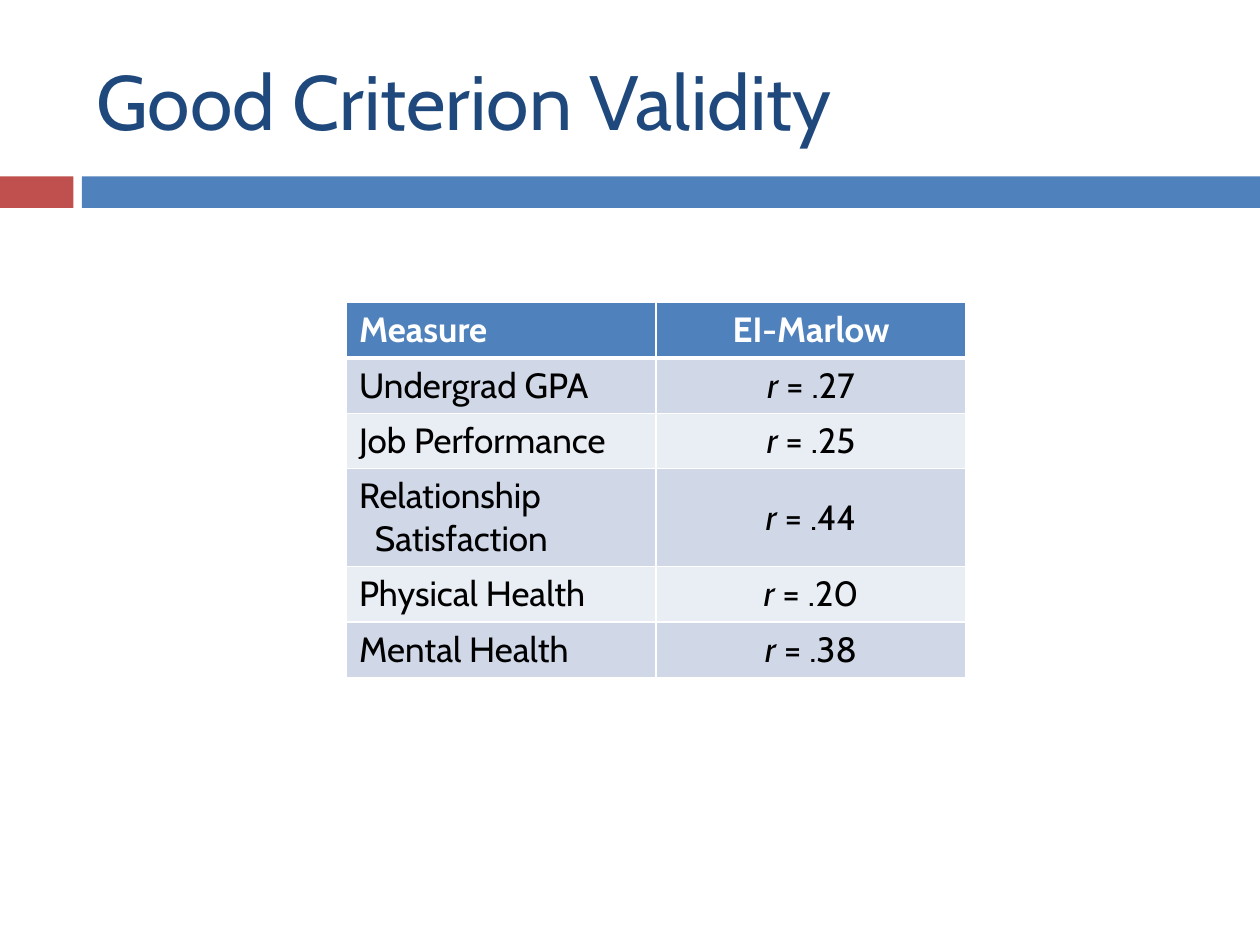
from dataclasses import dataclass

from lxml import etree
from pptx import Presentation
from pptx.dml.color import RGBColor
from pptx.enum.shapes import MSO_SHAPE
from pptx.enum.text import MSO_ANCHOR, PP_ALIGN
from pptx.oxml.ns import qn
from pptx.util import Pt

RECTANGLE = MSO_SHAPE.RECTANGLE
LEFT, CENTER = PP_ALIGN.LEFT, PP_ALIGN.CENTER
TOP, MIDDLE = MSO_ANCHOR.TOP, MSO_ANCHOR.MIDDLE
TITLE_ONLY = 5


@dataclass(frozen=True)
class Theme:
    font: str = "Cabin"
    title_size: int = 44
    table_size: int = 20
    title: str = "1F497D"
    accent: str = "C0504D"
    primary: str = "4F81BD"
    bands: tuple = ("D0D8E8", "E9EDF4")
    text: str = "000000"
    white: str = "FFFFFF"


THEME = Theme()
HEADERS = ("Measure", "EI-Marlow")
CORRELATIONS = (
    ("Undergrad GPA", ".27"),
    ("Job Performance", ".25"),
    ("Relationship\vSatisfaction", ".44"),
    ("Physical Health", ".20"),
    ("Mental Health", ".38"),
)
ROW_HEIGHT, TALL_ROW_HEIGHT = 31, 56
HANGING_INDENT = 9


def color(value):
    return RGBColor.from_string(value)


def paint(part, value):
    part.fill.solid()
    part.fill.fore_color.rgb = color(value)


def format_font(font, size, value, **formats):
    formats.update(name=THEME.font, size=Pt(size))
    for name, setting in formats.items():
        setattr(font, name, setting)
    font.color.rgb = color(value)


def add_title(page, box, words):
    title = page.shapes.title
    title.left, title.top, title.width, title.height = map(Pt, box)
    frame = title.text_frame
    frame.text = words
    frame.word_wrap = True
    frame.vertical_anchor = MIDDLE
    para = frame.paragraphs[0]
    para.alignment = LEFT
    format_font(para.runs[0].font, THEME.title_size, THEME.title)


def add_divider(page, box):
    """Short accent block, a gap, then a bar filling the rest of the box."""
    left, top, width, height = box
    block, bar_start = 42, 46.8
    for offset, length, value in (
        (0, block, THEME.accent),
        (bar_start, width - bar_start, THEME.primary),
    ):
        bar = page.shapes.add_shape(
            RECTANGLE, Pt(left + offset), Pt(top), Pt(length), Pt(height))
        bar.shadow.inherit = False
        bar.line.fill.background()
        paint(bar, value)


def add_borders(cell, widths):
    properties = cell._tc.get_or_add_tcPr()
    for side in "LRTB":
        line = etree.SubElement(
            properties, qn(f"a:ln{side}"), w=str(Pt(widths.get(side, 1))))
        fill = etree.SubElement(line, qn("a:solidFill"))
        etree.SubElement(fill, qn("a:srgbClr"), val=THEME.white)


def fill_cell(cell, spans, column, row):
    """Write (words, italic) spans into a cell and style it by its position."""
    header = row == 0
    add_borders(cell, {0: {"B": 3}, 1: {"T": 3}}.get(row, {}))
    paint(cell, THEME.primary if header else THEME.bands[(row - 1) % 2])
    cell.vertical_anchor = TOP if header else MIDDLE
    para = cell.text_frame.paragraphs[0]
    para.alignment = CENTER if column else LEFT
    for words, italic in spans:
        for number, line in enumerate(words.split("\v")):
            if number:
                # Later lines of a label hang under the first
                para.add_line_break()
                properties = para._p.get_or_add_pPr()
                properties.set("marL", str(Pt(HANGING_INDENT)))
                properties.set("indent", str(-Pt(HANGING_INDENT)))
            span = para.add_run()
            span.text = line
            format_font(span.font, THEME.table_size,
                        THEME.white if header else THEME.text,
                        bold=header, italic=italic)


def add_correlation_table(page, left, top, width):
    heights = [ROW_HEIGHT] + [
        TALL_ROW_HEIGHT if "\v" in label else ROW_HEIGHT
        for label, _ in CORRELATIONS]
    table = page.shapes.add_table(
        len(heights), len(HEADERS),
        Pt(left), Pt(top), Pt(width), Pt(sum(heights))).table
    for column in table.columns:
        column.width = Pt(width / len(HEADERS))
    for row, height in zip(table.rows, heights):
        row.height = Pt(height)

    # Header row, then one row for each measure
    contents = [[[(words, False)] for words in HEADERS]]
    contents += [[[(label, False)], [("r", True), (f" = {value}", False)]]
                 for label, value in CORRELATIONS]
    for row, cells in enumerate(contents):
        for column, spans in enumerate(cells):
            fill_cell(table.cell(row, column), spans, column, row)


def main():
    deck = Presentation()
    deck.slide_width, deck.slide_height = Pt(720), Pt(540)
    page = deck.slides.add_slide(deck.slide_layouts[TITLE_ONLY])
    add_divider(page, (0, 100.8, 720, 18))
    add_title(page, (48, 18, 642, 78), "Good Criterion Validity")
    add_correlation_table(page, 198, 173, 354)
    deck.save("out.pptx")


if __name__ == "__main__":
    main()
